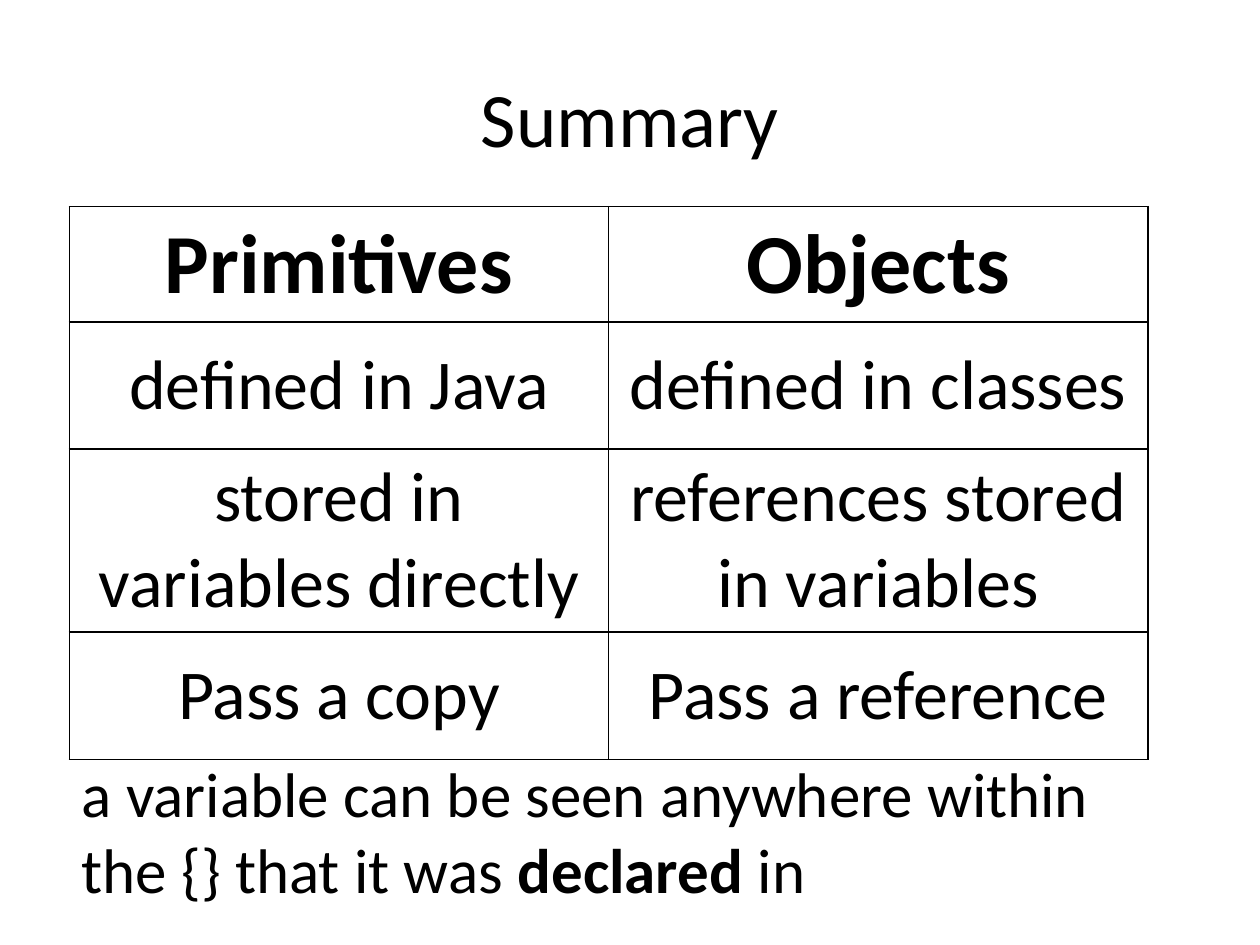
"""Build a summary slide comparing primitives and objects."""
from lxml import etree
from pptx import Presentation
from pptx.dml.color import RGBColor
from pptx.enum import text
from pptx.oxml import ns
from pptx.util import Inches, Pt

BLACK = RGBColor(0, 0, 0)
FONT = "Calibri"
TITLE = "Summary"
ROWS = [
    ("Primitives", "Objects"),
    ("defined in Java", "defined in classes"),
    ("stored in variables directly", "references stored in variables"),
    ("Pass a copy", "Pass a reference"),
]
ROW_HEIGHTS = [0.78, 1.01, 1.39, 1.01]
COL_WIDTH = 4.28
NOTE = [
    ("a variable can be seen anywhere within the {} that it was ", False),
    ("declared ", True),
    ("in", False),
]


def style(r, size, bold=False):
    r.font.name, r.font.size, r.font.bold = FONT, Pt(size), bold
    r.font.color.rgb = BLACK


def add_borders(cell):
    tc_pr = cell._tc.get_or_add_tcPr()
    for side in ("a:lnL", "a:lnR", "a:lnT", "a:lnB"):
        ln = etree.SubElement(tc_pr, ns.qn(side), w=str(Pt(1)))
        fill = etree.SubElement(ln, ns.qn("a:solidFill"))
        etree.SubElement(fill, ns.qn("a:srgbClr"), val=str(BLACK))


def add_title(s):
    sp = s.shapes.title
    sp.left, sp.top, sp.width, sp.height = map(Inches, (0.5, 0.3, 9, 1.25))
    tf = sp.text_frame
    tf.text = TITLE
    tf.vertical_anchor = text.MSO_ANCHOR.MIDDLE
    p = tf.paragraphs[0]
    p.alignment = text.PP_ALIGN.CENTER
    style(p.runs[0], 44)


def add_comparison(s):
    cols = len(ROWS[0])
    box = map(Inches, (0.55, 1.64, cols * COL_WIDTH, sum(ROW_HEIGHTS)))
    table = s.shapes.add_table(len(ROWS), cols, *box).table
    table.horz_banding = table.first_row = False
    for i, (row, height) in enumerate(zip(ROWS, ROW_HEIGHTS)):
        table.rows[i].height = Inches(height)
        for j, value in enumerate(row):
            cell = table.cell(i, j)
            cell.text = value
            cell.vertical_anchor = text.MSO_ANCHOR.MIDDLE
            p = cell.text_frame.paragraphs[0]
            p.alignment = text.PP_ALIGN.CENTER
            style(p.runs[0], 40 if i else 48, bold=i == 0)
            add_borders(cell)
            cell.fill.background()


def add_note(s):
    sp = s.shapes.add_textbox(*map(Inches, (0.55, 5.94, 8.59, 1.31)))
    tf = sp.text_frame
    tf.word_wrap = True
    tf.auto_size = text.MSO_AUTO_SIZE.SHAPE_TO_FIT_TEXT
    for value, bold in NOTE:
        r = tf.paragraphs[0].add_run()
        r.text = value
        style(r, 36, bold)


def main():
    prs = Presentation()
    prs.slide_width, prs.slide_height = Inches(10), Inches(7.5)
    s = prs.slides.add_slide(prs.slide_layouts[5])
    add_title(s)
    add_comparison(s)
    add_note(s)
    prs.save("out.pptx")


if __name__ == "__main__":
    main()
